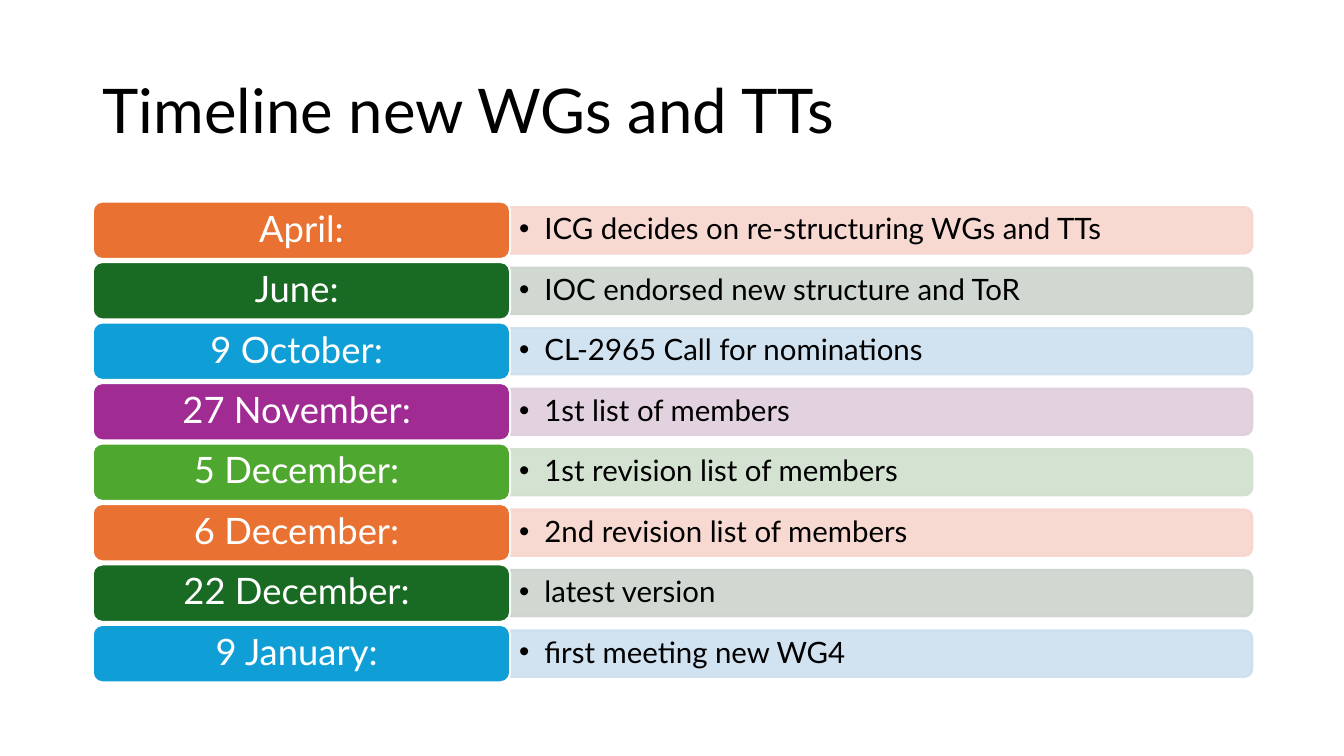
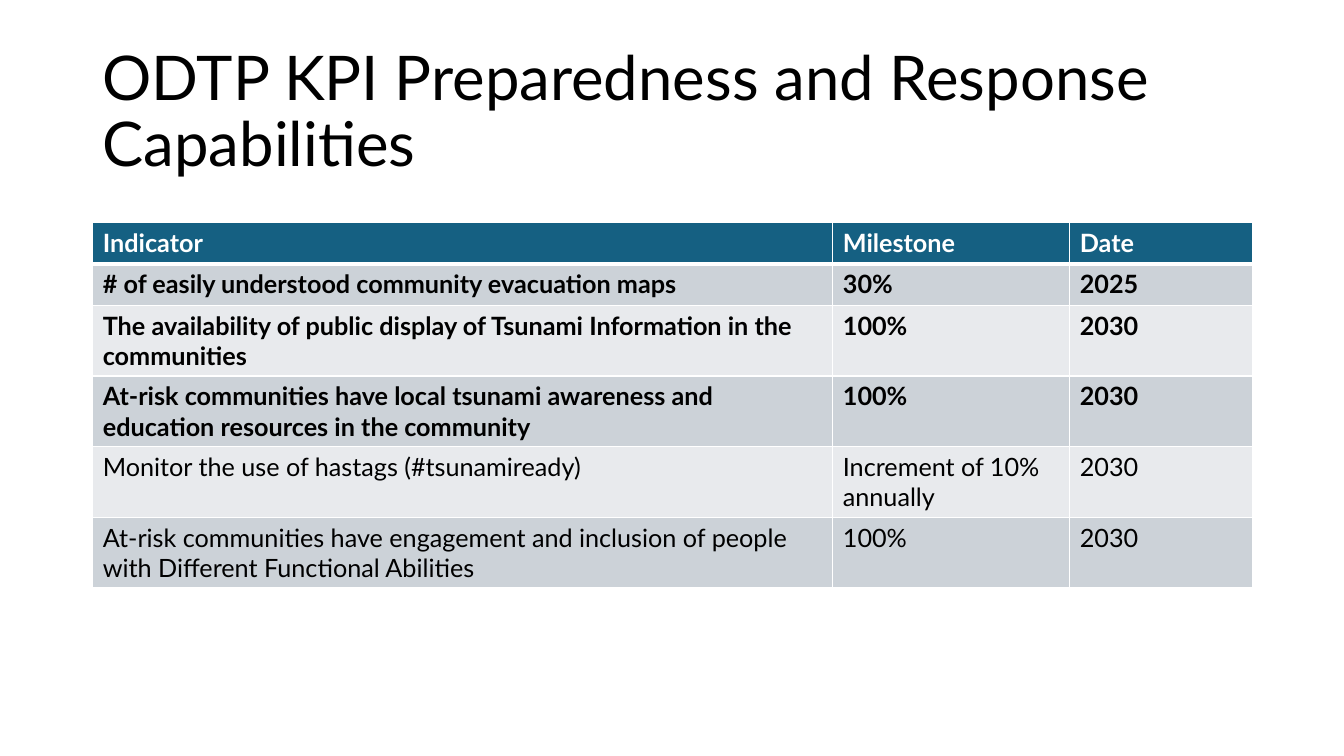
from lxml.etree import SubElement
from pptx import Presentation
from pptx.dml.color import RGBColor
from pptx.enum.shapes import MSO_SHAPE
from pptx.enum.text import MSO_ANCHOR, PP_ALIGN
from pptx.oxml import parse_xml
from pptx.oxml.ns import nsdecls, qn
from pptx.util import Inches, Pt

FONT = "Lato"
BLACK, WHITE = "000000", "FFFFFF"
LEFT, WIDE = 0.92, 11.5


def paint(item, color):
    """Give a fill, line or font one solid colour."""
    if hasattr(item, "solid"):
        item.solid()
        item.fore_color.rgb = RGBColor.from_string(color)
    elif hasattr(item, "fill"):
        paint(item.fill, color)
    else:
        item.color.rgb = RGBColor.from_string(color)


def write(frame, text, size, color, bold=False, space=0.9):
    """Fill a text frame with one styled paragraph."""
    frame.text = text
    frame.word_wrap = True
    frame.vertical_anchor = MSO_ANCHOR.MIDDLE
    para = frame.paragraphs[0]
    para.line_spacing = space
    font = para.runs[0].font
    font.name, font.size, font.bold = FONT, Pt(size), bold
    paint(font.fill, color)
    return para


deck = Presentation()
deck.slide_width, deck.slide_height = Inches(13.33), Inches(7.5)

# Slides and their titles
slides = []
for title in ["Timeline new WGs and TTs",
              "ODTP KPI Preparedness and Response Capabilities"]:
    slide = deck.slides.add_slide(deck.slide_layouts[6])
    box = slide.shapes.add_textbox(
        Inches(LEFT), Inches(0.4), Inches(WIDE), Inches(1.45))
    write(box.text_frame, title, 44, BLACK)
    slides.append(slide)
first, second = slides

# Timeline: a dark date label and a pale bar in each row
tones = [("E97132", "F7D5CE"), ("196B24", "CCD4CD"), ("0F9ED5", "CCDFEF"),
         ("A02B93", "DFCDDC"), ("4EA72E", "D0E1CD")]
steps = [
    ("April:", "ICG decides on re-structuring WGs and TTs"),
    ("June: ", "IOC endorsed new structure and ToR"),
    ("9 October: ", "CL-2965 Call for nominations"),
    ("27 November: ", "1st list of members"),
    ("5 December: ", "1st revision list of members"),
    ("6 December: ", "2nd revision list of members"),
    ("22 December: ", "latest version"),
    ("9 January: ", "first meeting new WG4"),
]
top, pitch, high = 2, 0.6, 0.57
date_w, bar_w, bar_h = 4.14, 7.36, 0.46
bar_x = LEFT + date_w

for row, (date, event) in enumerate(steps):
    dark, pale = tones[row % len(tones)]
    y = top + row * pitch
    mid = y + high / 2

    # The bar is turned so that its round corners face right
    bar = first.shapes.add_shape(
        MSO_SHAPE.ROUND_2_SAME_RECTANGLE,
        Inches(bar_x + (bar_w - bar_h) / 2), Inches(mid - bar_w / 2),
        Inches(bar_h), Inches(bar_w))
    bar.rotation = 90
    label = first.shapes.add_shape(
        MSO_SHAPE.ROUNDED_RECTANGLE,
        Inches(LEFT), Inches(y), Inches(date_w), Inches(high))
    for shape, fill, edge in [(bar, pale, pale), (label, dark, WHITE)]:
        shape.shadow.inherit = False
        paint(shape.fill, fill)
        paint(shape.line, edge)
        shape.line.width = Pt(1.5)
    for tint in bar.fill._xPr.iter(qn("a:srgbClr")):
        SubElement(tint, qn("a:alpha"), val="90000")

    write(label.text_frame, date, 26, WHITE).alignment = PP_ALIGN.CENTER

    # Event text with a hanging bullet
    box = first.shapes.add_textbox(
        Inches(bar_x), Inches(mid - 0.2), Inches(bar_w), Inches(0.4))
    frame = box.text_frame
    frame.margin_left = frame.margin_right = Inches(0.09)
    frame.margin_top = frame.margin_bottom = Inches(0.04)
    props = write(frame, event, 21, BLACK)._p.get_or_add_pPr()
    props.set("marL", str(Inches(0.25)))
    props.set("indent", str(-Inches(0.25)))
    SubElement(props, qn("a:buFont"), typeface="Arial")
    SubElement(props, qn("a:buChar"), char="•")

# Indicator table
rows = [
    ("Indicator", "Milestone", "Date"),
    ("# of easily understood community evacuation maps", "30%", "2025"),
    ("The availability of public display of Tsunami Information in the "
     "communities", "100%", "2030"),
    ("At-risk communities have local tsunami awareness and education "
     "resources in the community", "100%", "2030"),
    ("Monitor the use of hastags (#tsunamiready)",
     "Increment of 10% annually", "2030"),
    ("At-risk communities have engagement and inclusion of people with "
     "Different Functional Abilities", "100%", "2030"),
]
widths = [7.34, 2.35, 1.81]
heights = [0.41] * 2 + [0.7] * 4
table = second.shapes.add_table(
    len(rows), len(widths), Inches(LEFT), Inches(2.21),
    Inches(WIDE), Inches(sum(heights))).table
for col, width in zip(table.columns, widths):
    col.width = Inches(width)

for r, texts in enumerate(rows):
    table.rows[r].height = Inches(heights[r])
    fill = "156082" if r == 0 else ("E8EAED", "CCD2D8")[r % 2]
    for c, text in enumerate(texts):
        cell = table.cell(r, c)
        write(cell.text_frame, text, 18, WHITE if r == 0 else BLACK,
              bold=r < 4, space=1.0)
        cell.vertical_anchor = MSO_ANCHOR.TOP
        paint(cell.fill, fill)
        # White borders, thicker below the header
        props = cell._tc.get_or_add_tcPr()
        for n, side in enumerate("LRTB"):
            thick = (r, side) in [(0, "B"), (1, "T")]
            props.insert(n, parse_xml(
                f'<a:ln{side} {nsdecls("a")} w="{Pt(3 if thick else 1)}">'
                f'<a:solidFill><a:srgbClr val="{WHITE}"/></a:solidFill>'
                f'</a:ln{side}>'))

deck.save("out.pptx")
